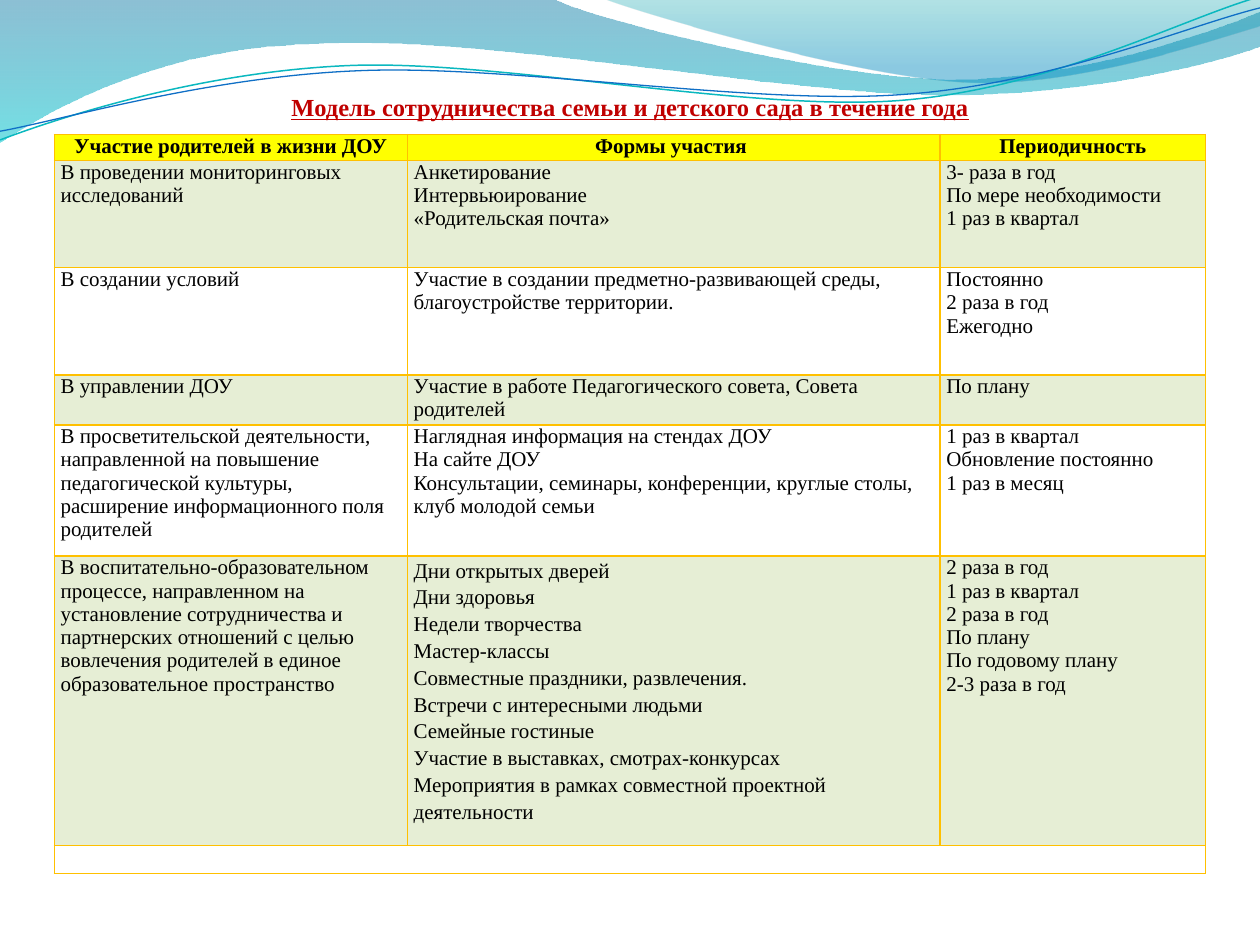
"""Build a slide with a yearly plan of family and kindergarten cooperation."""
import math

from lxml import etree
from pptx import Presentation
from pptx.dml.color import RGBColor
from pptx.enum import text
from pptx.oxml import ns
from pptx.util import Pt

FONT = "Times New Roman"
COLORS = {
    "title": "C00000", "text": "000000", "border": "FFC000",
    "header": "FFFF00", "band": "E6EED5",
    "wave_top": "0074A1", "wave_bottom": "00C6CF",
    "crest_top": "00A1A9", "crest_bottom": "008BBF",
    "teal": "0AB8BF", "blue": "0F6FC6",
}
COLUMNS = [201.8, 304.4, 151.8]
ROW_HEIGHTS = [14.8, 61.2, 61.2, 28.6, 75, 165.4, 16]
ROWS = [
    (["Участие родителей в жизни ДОУ"], ["Формы участия "], ["Периодичность"]),
    (["В проведении мониторинговых исследований"],
     ["Анкетирование", "Интервьюирование", "«Родительская почта»"],
     ["3- раза в год", "По мере необходимости", "1 раз в квартал"]),
    (["В создании условий"],
     ["Участие в создании предметно-развивающей среды,",
      "благоустройстве территории."],
     ["Постоянно", "2 раза в год", "Ежегодно"]),
    (["В управлении ДОУ"],
     ["Участие в работе Педагогического совета, Совета родителей"],
     ["По плану"]),
    (["В просветительской деятельности, направленной на повышение "
      "педагогической культуры, расширение информационного поля родителей"],
     ["Наглядная информация на стендах ДОУ", "На сайте ДОУ",
      "Консультации, семинары, конференции, круглые столы, "
      "клуб молодой семьи"],
     ["1 раз в квартал", "Обновление постоянно", "1 раз в месяц"]),
    (["В воспитательно-образовательном процессе, направленном на "
      "установление сотрудничества и партнерских отношений с целью "
      "вовлечения родителей в единое образовательное пространство"],
     ["Дни открытых дверей", "Дни здоровья", "Недели творчества",
      "Мастер-классы", "Совместные праздники, развлечения.",
      "Встречи с интересными людьми", "Семейные гостиные",
      "Участие в выставках, смотрах-конкурсах",
      "Мероприятия в рамках совместной проектной деятельности"],
     ["2 раза в год", "1 раз в квартал", "2 раза в год", "По плану",
      "По годовому плану", "2-3 раза в год"]),
    ([""], [""], [""]),
]
LOOSE_CELL = (5, 1)

WAVE = [
    [(0, 0)], [(317, -0.5)],
    [(343, 12), (478, 45), (546, 45)], [(614, 45), (690, 19), (720, 6.5)],
    [(720.5, 26)],
    [(708, 32), (626, 55), (537, 54)], [(448, 54), (275, 20), (185, 24.5)],
    [(93, 26), (33, 60), (-0.5, 81.5)],
]
CREST = [
    [(345, -0.5)],
    [(366, 8), (491, 44.5), (554, 47)], [(616, 49.5), (692, 23), (720, 15)],
    [(720, 0)],
]
TEAL_LINE = [
    [(0, 80)],
    [(34.5, 67), (114, 41), (199.5, 37.5)],
    [(284.5, 34), (427, 64), (513.5, 57.5)],
    [(600, 51), (675, 11), (718.5, -1.5)],
]
BLUE_LINE = [
    [(0, 75)],
    [(34, 69), (118, 44), (204, 40.5)],
    [(290, 36.5), (430, 60.5), (516, 54)],
    [(602, 48), (677.5, 15), (720, 4.5)],
]
TILT = -2.7


def rgb(name):
    return RGBColor.from_string(COLORS[name])


def turn(point, center, degrees):
    a = math.radians(degrees)
    dx, dy = point[0] - center[0], point[1] - center[1]
    return (center[0] + dx * math.cos(a) - dy * math.sin(a),
            center[1] + dx * math.sin(a) + dy * math.cos(a))


def add_outline(s, segments, closed):
    anchors = [seg[-1] for seg in segments]
    builder = s.shapes.build_freeform(*(v * 100 for v in anchors[0]), scale=Pt(1) / 100)
    builder.add_line_segments([(x * 100, y * 100) for x, y in anchors[1:]], close=closed)
    sp = builder.convert_to_shape()
    sp.shadow.inherit = False
    left, top = (min(values) for values in zip(*anchors))
    lines = list(sp._element.iter(ns.qn("a:lnTo")))
    for line, seg in zip(lines, segments[1:]):
        if len(seg) == 3:
            line.tag = ns.qn("a:cubicBezTo")
            for i, (x, y) in enumerate(seg[:2]):
                pt = etree.Element(ns.qn("a:pt"), x=str(round((x - left) * 100)),
                                   y=str(round((y - top) * 100)))
                line.insert(i, pt)
    return sp


def add_wave(s, segments, stops):
    sp = add_outline(s, segments, True)
    sp.line.fill.background()
    sp.fill.gradient()
    sp.fill.gradient_angle = 270
    for stop, (position, color, _) in zip(sp.fill.gradient_stops, stops):
        stop.position = position
        stop.color.rgb = rgb(color)
    for clr, (_, _, opacity) in zip(sp._element.spPr.iter(ns.qn("a:srgbClr")), stops):
        etree.SubElement(clr, ns.qn("a:alpha"), val=str(opacity * 1000))


def add_curve(s, segments, center, color, width):
    level = [[turn(point, center, -TILT) for point in seg] for seg in segments]
    sp = add_outline(s, level, False)
    sp.rotation = TILT
    sp.fill.background()
    sp.line.color.rgb = rgb(color)
    sp.line.width = Pt(width)


def style_font(p, size, color, bold=False, underline=False):
    p.font.name = FONT
    p.font.size = Pt(size)
    p.font.bold = bold
    p.font.underline = underline
    p.font.color.rgb = rgb(color)


def add_title(s, title):
    sp = s.shapes.title
    s.shapes._spTree.append(sp._element)
    sp.left, sp.top, sp.width, sp.height = Pt(14.2), Pt(49), Pt(692), Pt(24.5)
    tf = sp.text_frame
    tf.text = title
    tf.auto_size = text.MSO_AUTO_SIZE.NONE
    tf.vertical_anchor = text.MSO_ANCHOR.MIDDLE
    p = tf.paragraphs[0]
    p.alignment = text.PP_ALIGN.CENTER
    style_font(p, 14, "title", bold=True, underline=True)


def set_borders(cell):
    tcPr = cell._tc.get_or_add_tcPr()
    for i, side in enumerate(("lnL", "lnR", "lnT", "lnB")):
        ln = etree.Element(ns.qn(f"a:{side}"), w=str(Pt(1)))
        fill = etree.SubElement(ln, ns.qn("a:solidFill"))
        etree.SubElement(fill, ns.qn("a:srgbClr"), val=COLORS["border"])
        tcPr.insert(i, ln)


def fill_cell(cell, lines, header, color, spacing):
    cell.margin_left = cell.margin_right = Pt(3.6)
    cell.margin_top = cell.margin_bottom = 0
    if color:
        cell.fill.solid()
        cell.fill.fore_color.rgb = rgb(color)
    else:
        cell.fill.background()
    cell.text_frame.text = "\n".join(lines)
    for p in cell.text_frame.paragraphs:
        style_font(p, 12, "text", bold=header)
        p.line_spacing = spacing
        if header:
            p.alignment = text.PP_ALIGN.CENTER
    set_borders(cell)


def add_plan_table(s):
    table = s.shapes.add_table(
        len(ROWS), len(COLUMNS), Pt(31), Pt(77),
        Pt(sum(COLUMNS)), Pt(sum(ROW_HEIGHTS))).table
    table.first_row = table.horz_banding = False
    for column, width in zip(table.columns, COLUMNS):
        column.width = Pt(width)
    for r, (row, height) in enumerate(zip(ROWS, ROW_HEIGHTS)):
        table.rows[r].height = Pt(height)
        color = "header" if r == 0 else "band" if r % 2 else None
        for c, lines in enumerate(row):
            spacing = 1.15 if (r, c) == LOOSE_CELL else 1.0
            fill_cell(table.cell(r, c), lines, r == 0, color, spacing)
    last = len(ROWS) - 1
    table.cell(last, 0).merge(table.cell(last, len(COLUMNS) - 1))


def main():
    prs = Presentation()
    prs.slide_width, prs.slide_height = Pt(720), Pt(540)
    s = prs.slides.add_slide(prs.slide_layouts[5])
    add_wave(s, WAVE, [(0, "wave_top", 45), (1, "wave_bottom", 55)])
    add_wave(s, CREST, [(0, "crest_top", 30), (0.8, "crest_bottom", 45)])
    add_curve(s, TEAL_LINE, (359.3, 41.4), "teal", 0.85)
    add_curve(s, BLUE_LINE, (359.6, 42.5), "blue", 0.75)
    add_title(s, "Модель сотрудничества семьи и детского сада в течение года")
    add_plan_table(s)
    prs.save("out.pptx")


if __name__ == "__main__":
    main()
